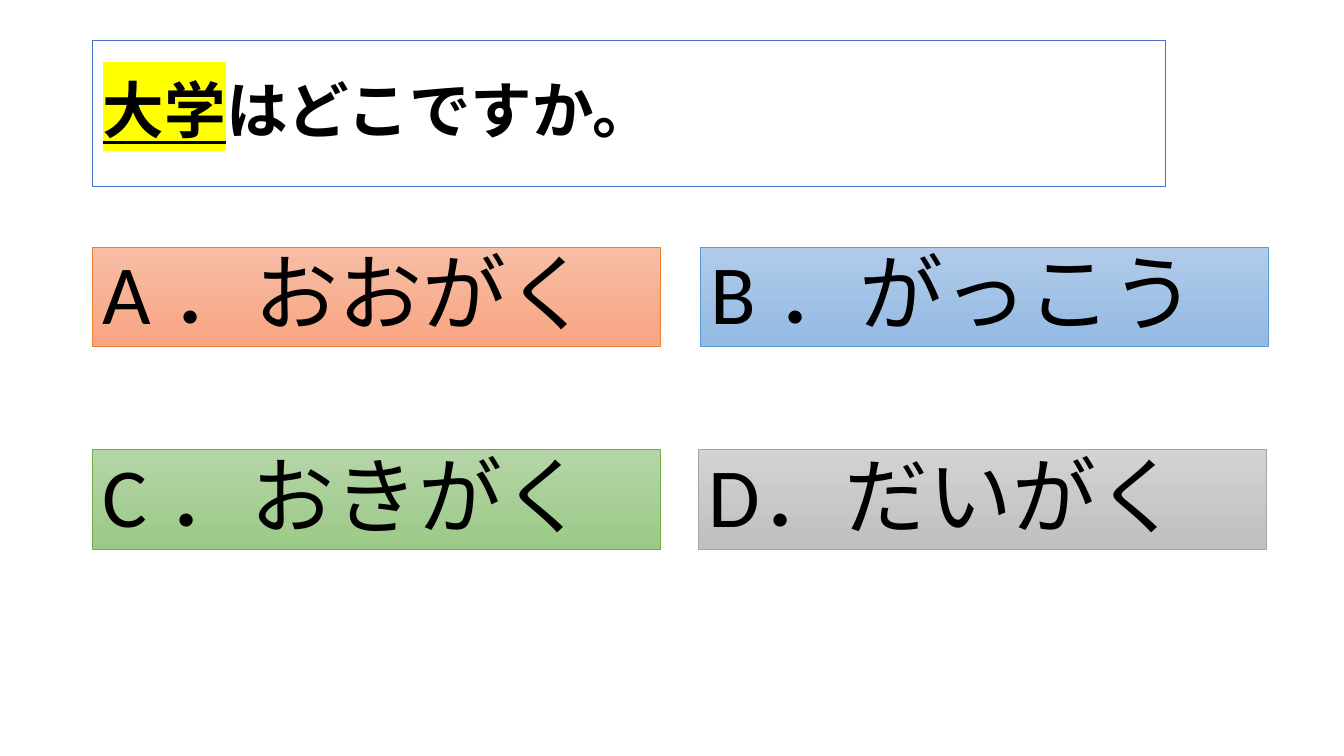
from dataclasses import dataclass

from lxml import etree
from pptx import Presentation
from pptx.dml.color import RGBColor
from pptx.enum.shapes import MSO_SHAPE
from pptx.enum.text import MSO_ANCHOR, MSO_AUTO_SIZE, PP_ALIGN
from pptx.oxml.ns import qn
from pptx.util import Pt

RECTANGLE = MSO_SHAPE.RECTANGLE
LEFT = PP_ALIGN.LEFT
TOP, MIDDLE = MSO_ANCHOR.TOP, MSO_ANCHOR.MIDDLE
NO_AUTOFIT = MSO_AUTO_SIZE.NONE


@dataclass(frozen=True)
class Theme:
    """Hold the colours, font and type sizes of the quiz page."""
    font: str = "Calibri"
    title_size: int = 44
    answer_size: int = 60
    text: str = "000000"
    paper: str = "FFFFFF"
    title_line: str = "4472C4"
    highlight: str = "FFFF00"
    orange: tuple = ("F7BDA5", "F8A582", "ED7D31")
    blue: tuple = ("B1CBE9", "93B9E4", "5B9BD5")
    green: tuple = ("B5D5A7", "9CC987", "70AD47")
    grey: tuple = ("D2D2D2", "C0C0C0", "A5A5A5")


THEME = Theme()
MARGIN = 66.24
ANSWER_WIDTH, ANSWER_HEIGHT = 405.36, 71.28
ANSWER_TOP, ROW_STEP = 176.4, 144.72
RIGHT_COLUMNS = (500.4, 499)


def rgb(value):
    """Turn a hex string into a colour."""
    return RGBColor.from_string(value)


def place(box, left, top, width, height):
    """Set the position and size of a box in points."""
    box.left, box.top = Pt(left), Pt(top)
    box.width, box.height = Pt(width), Pt(height)


def outline(box, colour, width):
    """Draw the border of a box."""
    box.line.color.rgb = rgb(colour)
    box.line.width = Pt(width)


def format_para(box, anchor, size, space_before):
    """Format the single paragraph of a box and return it."""
    frame = box.text_frame
    frame.word_wrap = True
    frame.auto_size = NO_AUTOFIT
    frame.vertical_anchor = anchor
    para = frame.paragraphs[0]
    para.alignment = LEFT
    para.line_spacing = 0.9
    para.space_before = Pt(space_before)
    for span in para.runs:
        span.font.name = THEME.font
        span.font.size = Pt(size)
        span.font.color.rgb = rgb(THEME.text)
    return para


def remove_bullet(para):
    """Clear the list bullet and its indent."""
    properties = para._p.get_or_add_pPr()
    properties.set("marL", "0")
    properties.set("indent", "0")
    etree.SubElement(properties, qn("a:buNone"))


def highlight(span, colour):
    """Mark a run with a background colour."""
    marker = etree.Element(qn("a:highlight"))
    etree.SubElement(marker, qn("a:srgbClr")).set("val", colour)
    span._r.get_or_add_rPr().find(qn("a:solidFill")).addnext(marker)


def write_question(box, keyword, rest):
    """Fill the title with a question whose keyword is marked."""
    place(box, MARGIN, 28.8, 766.08, 104.4)
    box.fill.solid()
    box.fill.fore_color.rgb = rgb(THEME.paper)
    outline(box, THEME.title_line, 1)
    box.text_frame.text = keyword
    box.text_frame.paragraphs[0].add_run().text = rest
    para = format_para(box, MIDDLE, THEME.title_size, 0)
    for span in para.runs:
        span.font.bold = True
    para.runs[0].font.underline = True
    highlight(para.runs[0], THEME.highlight)


def write_answer(box, text, colours, left, top):
    """Fill a box with one answer on a vertical gradient."""
    start, end, border = colours
    place(box, left, top, ANSWER_WIDTH, ANSWER_HEIGHT)
    box.fill.gradient()
    box.fill.gradient_angle = 270
    for stop, colour in zip(box.fill.gradient_stops, (start, end)):
        stop.color.rgb = rgb(colour)
    outline(box, border, 0.5)
    box.text_frame.text = text
    remove_bullet(format_para(box, TOP, THEME.answer_size, 10))


def add_answer_box(page):
    """Add a plain rectangle for an answer."""
    box = page.shapes.add_shape(RECTANGLE, 0, 0, Pt(1), Pt(1))
    box.shadow.inherit = False
    return box


def main():
    """Build the quiz page and save it."""
    deck = Presentation()
    deck.slide_width, deck.slide_height = Pt(960), Pt(540)
    page = deck.slides.add_slide(deck.slide_layouts[1])
    write_question(page.shapes.title, "大学", "はどこですか。")
    answers = (
        ("A ．おおがく", THEME.orange),
        ("B ．がっこう", THEME.blue),
        ("C ．おきがく", THEME.green),
        ("D．だいがく", THEME.grey),
    )
    for index, (text, colours) in enumerate(answers):
        row, column = divmod(index, 2)
        box = add_answer_box(page) if index else page.placeholders[1]
        left = RIGHT_COLUMNS[row] if column else MARGIN
        write_answer(box, text, colours, left, ANSWER_TOP + row * ROW_STEP)
    deck.save("out.pptx")


if __name__ == "__main__":
    main()
